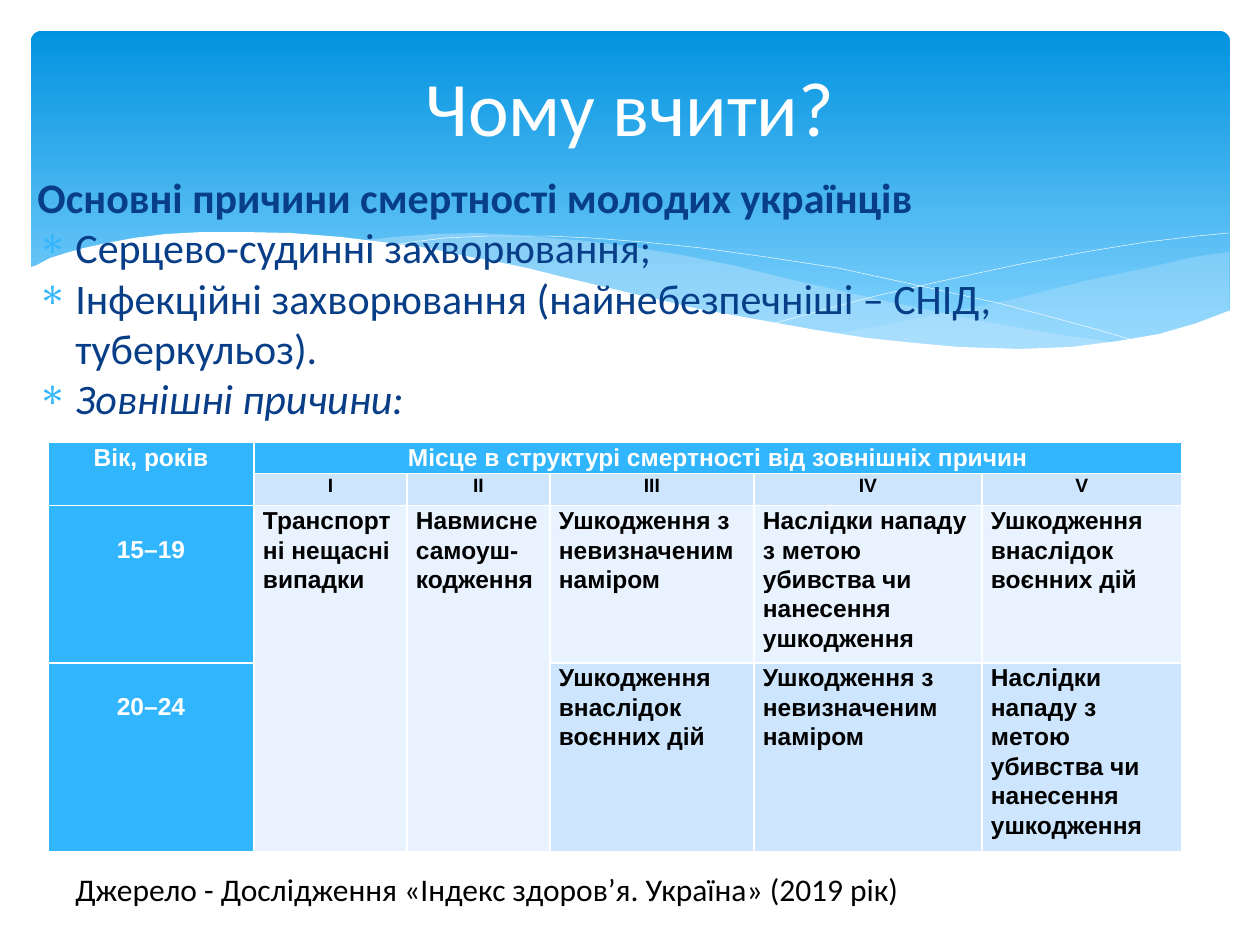
import pptx
import pptx.util
import pptx.dml.color
import pptx.enum.shapes
import pptx.enum.text
import pptx.oxml.ns
import lxml.etree

Pt = pptx.util.Pt
RGBColor = pptx.dml.color.RGBColor
ALIGN = pptx.enum.text.PP_ALIGN
qn = pptx.oxml.ns.qn

WHITE = RGBColor(0xFF, 0xFF, 0xFF)
BLACK = RGBColor(0x00, 0x00, 0x00)
NAVY = RGBColor(0x07, 0x3E, 0x87)
SKY = RGBColor(0x31, 0xB6, 0xFD)
PALE = RGBColor(0xCE, 0xE5, 0xFE)
LIGHT = RGBColor(0xE8, 0xF3, 0xFF)
MIST = RGBColor(0xC6, 0xE7, 0xFC)
DEEP = RGBColor(0x02, 0x93, 0xE0)
SOFT = RGBColor(0x83, 0xD3, 0xFE)


def px(n):
    return pptx.util.Emu(round(n * 914400 / 126))


def write(par, text, size, font, color, bold=False, italic=False):
    run = par.add_run()
    run.text = text
    run.font.size = Pt(size)
    run.font.name = font
    run.font.color.rgb = color
    run.font.bold = bold
    run.font.italic = italic


deck = pptx.Presentation()
deck.slide_width, deck.slide_height = px(1260), px(945)
slide = deck.slides.add_slide(deck.slide_layouts[5])
shapes = slide.shapes

# Blue panel
panel = shapes.add_shape(pptx.enum.shapes.MSO_SHAPE.ROUNDED_RECTANGLE,
                         px(31), px(31), px(1199), px(340))
panel.adjustments[0] = 0.03
panel.shadow.inherit = False
panel.line.fill.background()
panel.fill.gradient()
panel.fill.gradient_angle = 270
for stop, color, place in zip(panel.fill.gradient_stops, (DEEP, SOFT), (0, 0.9)):
    stop.color.rgb = color
    stop.position = place

# Waves: points, fill, opacity in percent; those without fill are thin lines
waves = [
    ([(1229, 252), (1194, 257), (1160, 265), (1085, 281), (1014, 299), (949, 312),
      (890, 324), (833, 334), (888, 341), (938, 345), (984, 349), (1026, 350),
      (1063, 349), (1099, 345), (1140, 339), (1160, 334), (1187, 326), (1213, 318),
      (1229, 311)], MIST, 29),
    ([(1125, 344), (1091, 339), (1055, 334), (976, 320), (890, 302), (793, 280),
      (736, 266), (682, 255), (632, 247), (586, 241), (529, 236), (479, 233),
      (433, 234), (394, 237), (360, 241), (407, 247), (456, 255), (509, 266),
      (566, 280), (619, 292), (668, 302), (757, 321), (819, 333), (876, 340),
      (927, 347), (973, 349), (1017, 350), (1068, 349), (1104, 347)], MIST, 40),
    ([(389, 246), (413, 242), (445, 238), (488, 236), (546, 236), (591, 238),
      (643, 242), (701, 248), (766, 257), (838, 268), (916, 285), (1002, 304),
      (1047, 316), (1095, 329), (1143, 343)], None, 100),
    ([(772, 324), (823, 310), (876, 296), (942, 281), (1016, 265), (1091, 251),
      (1147, 242), (1198, 236), (1229, 233)], None, 100),
    ([(1231, 310), (1197, 323), (1159, 334), (1118, 341), (1071, 347), (1019, 349),
      (959, 347), (915, 343), (867, 338), (816, 330), (760, 320), (699, 309),
      (634, 294), (563, 277), (527, 268), (493, 261), (460, 255), (428, 248),
      (398, 244), (341, 237), (290, 233), (243, 232), (203, 232), (166, 234),
      (134, 238), (107, 243), (84, 248), (66, 253), (50, 258), (37, 265),
      (29, 268), (29, 415), (1231, 415)], WHITE, 100),
]
for points, color, alpha in waves:
    pen = shapes.build_freeform(*points[0], scale=914400 / 126)
    pen.add_line_segments(points[1:], close=color is not None)
    wave = pen.convert_to_shape()
    wave.shadow.inherit = False
    if color is None:
        wave.fill.background()
        wave.line.color.rgb = WHITE
        wave.line.width = Pt(0.25)
        continue
    wave.line.fill.background()
    wave.fill.solid()
    wave.fill.fore_color.rgb = color
    if alpha < 100:
        tint = wave.fill._xPr.find(".//" + qn("a:srgbClr"))
        lxml.etree.SubElement(tint, qn("a:alpha"), val=str(alpha * 1000))

# Title, brought in front of the panel
title = shapes.title
title.left, title.top, title.width, title.height = px(63), px(47), px(1134), px(118)
title.text_frame.vertical_anchor = pptx.enum.text.MSO_ANCHOR.MIDDLE
par = title.text_frame.paragraphs[0]
par.alignment = ALIGN.CENTER
write(par, "Чому вчити?", 44, "Calibri", WHITE)
shapes._spTree.append(title._element)

# Source note
note = shapes.add_textbox(px(63), px(864), px(868), px(50)).text_frame
note.word_wrap = False
write(note.paragraphs[0], "Джерело - Дослідження «Індекс здоров’я. Україна» (2019 рік)",
      18, "Calibri", BLACK)

# Causes
body = shapes.add_textbox(px(25), px(165), px(1181), px(270)).text_frame
body.word_wrap = True
write(body.paragraphs[0], "Основні причини смертності молодих українців",
      24, "Calibri", NAVY, bold=True)
causes = [
    ("Серцево-судинні захворювання;", False),
    ("Інфекційні захворювання (найнебезпечніші – СНІД, туберкульоз).", False),
    ("Зовнішні причини:", True),
]
for text, slant in causes:
    par = body.add_paragraph()
    write(par, text, 24, "Calibri", NAVY, italic=slant)
    props = par._p.get_or_add_pPr()
    props.set("marL", str(px(38)))
    props.set("indent", str(px(-38)))
    tint = lxml.etree.SubElement(props, qn("a:buClr"))
    lxml.etree.SubElement(tint, qn("a:srgbClr"), val=str(SKY))
    lxml.etree.SubElement(props, qn("a:buChar"), char="∗")

# Table of external causes; None marks a cell covered by a merge
hurt = "Ушкодження внаслідок воєнних дій"
vague = "Ушкодження з невизначеним наміром"
attack = "Наслідки нападу з метою убивства чи нанесення ушкодження"
rows = [
    ["Вік, років", "Місце в структурі смертності від зовнішніх причин",
     None, None, None, None],
    [None, "І", "ІІ", "ІІІ", "IV", "V"],
    ["15–19", "Транспортні нещасні випадки", "Навмисне самоуш-\nкодження",
     vague, attack, hurt],
    ["20–24", None, None, hurt, vague, attack],
]
widths = [206, 153, 143, 204, 228, 200]
heights = [31, 32, 147, 176]
grid = shapes.add_table(4, 6, px(48), px(442), px(sum(widths)), px(sum(heights))).table
grid.first_col = True
for col, width in zip(grid.columns, widths):
    col.width = px(width)
for row, height in zip(grid.rows, heights):
    row.height = px(height)
for top, left, bottom, right in [(0, 0, 1, 0), (0, 1, 0, 5), (2, 1, 3, 1), (2, 2, 3, 2)]:
    grid.cell(top, left).merge(grid.cell(bottom, right))

for r, row in enumerate(rows):
    for c, text in enumerate(row):
        if text is None:
            continue
        cell = grid.cell(r, c)
        head = r == 0 or c == 0
        cell.fill.solid()
        cell.fill.fore_color.rgb = SKY if head else LIGHT if r == 2 else PALE
        cell.margin_left = cell.margin_right = px(9)
        cell.margin_top = px(29 if c == 0 and r > 1 else 0)
        cell.margin_bottom = 0
        for i, line in enumerate(text.split("\n")):
            frame = cell.text_frame
            par = frame.add_paragraph() if i else frame.paragraphs[0]
            par.alignment = ALIGN.CENTER if head or r == 1 else ALIGN.LEFT
            par.line_spacing = 1.07
            write(par, line, 11 if r == 1 else 14, "Arial",
                  WHITE if head else BLACK, bold=True)

deck.save("out.pptx")
